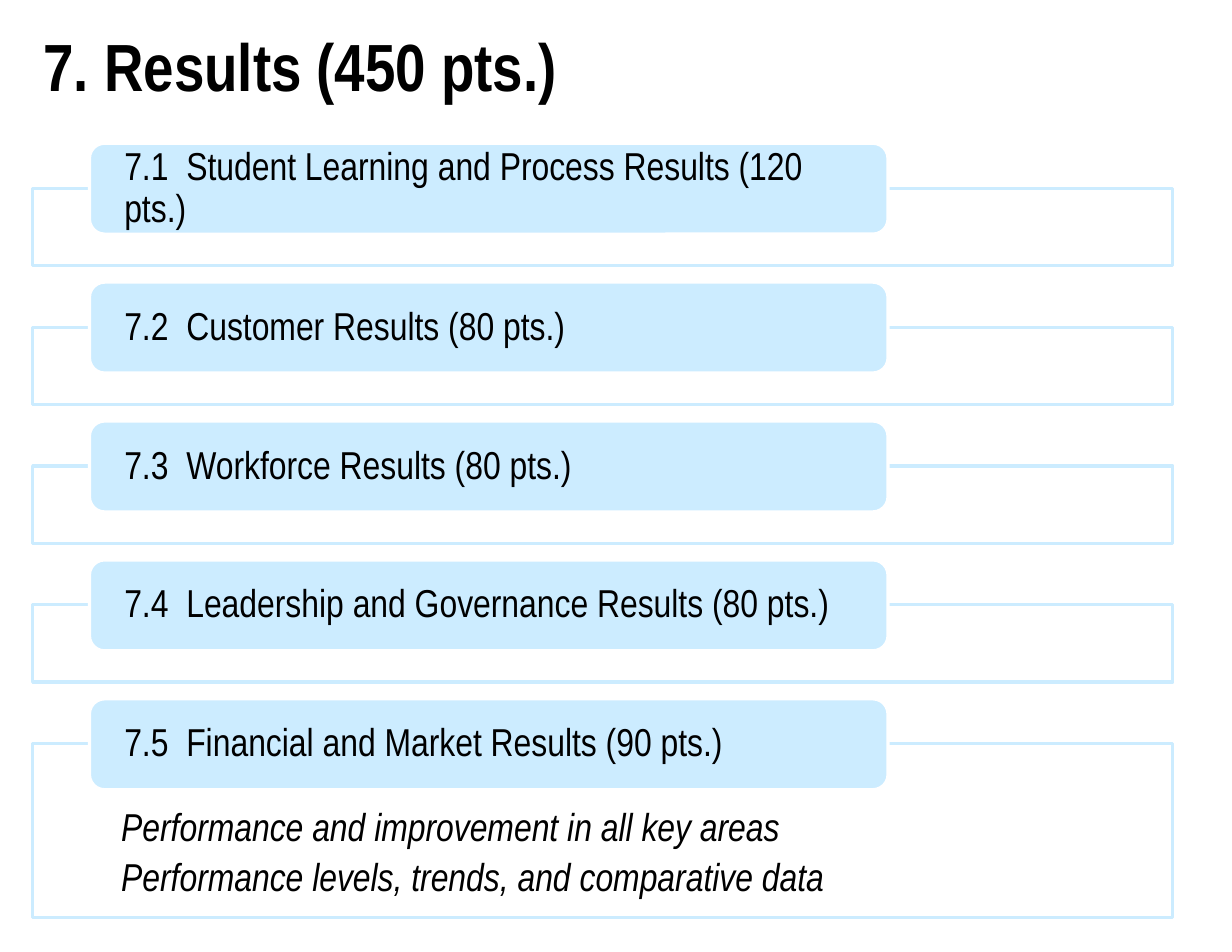
"""Build the "7. Results" slide: five titled result frames, the last with details."""
from dataclasses import dataclass

import pptx
import pptx.dml.color
import pptx.enum.shapes
import pptx.enum.text
import pptx.oxml
import pptx.oxml.ns
import pptx.util
from pptx.util import Cm

FONT = "Arial Narrow"
BLACK, WHITE, PALE = "000000", "FFFFFF", "CCECFF"
TOP, PITCH = 3.25, 3.15
LEFT, FRAME_W = 0.74, 25.86
LABEL_X, LABEL_W, LABEL_H = 2.03, 18.11, 2.06


@dataclass
class Item:
    label: str
    details: tuple[str, ...] = ()
    height: float = 1.75


ITEMS = [
    Item("7.1  Student Learning and Process Results (120 pts.)"),
    Item("7.2  Customer Results (80 pts.)"),
    Item("7.3  Workforce Results (80 pts.)"),
    Item("7.4  Leadership and Governance Results (80 pts.)"),
    Item("7.5  Financial and Market Results (90 pts.)",
         ("Performance and improvement in all key areas",
          "Performance levels, trends, and comparative data"), 3.94),
]


def rgb(value: str) -> pptx.dml.color.RGBColor:
    return pptx.dml.color.RGBColor.from_string(value)


def set_frame(tf, margins: tuple[float, ...], anchor) -> None:
    tf.word_wrap = True
    tf.vertical_anchor = anchor
    tf.margin_left, tf.margin_top, tf.margin_right, tf.margin_bottom = map(Cm, margins)


def add_run(p, text: str, size: float, bold: bool = False, italic: bool = False) -> None:
    p.alignment = pptx.enum.text.PP_ALIGN.LEFT
    r = p.add_run()
    r.text = text
    r.font.name, r.font.size = FONT, pptx.util.Pt(size)
    r.font.bold, r.font.italic = bold, italic
    r.font.color.rgb = rgb(BLACK)


def add_box(s, kind, box: tuple[float, ...], fill: str, line: str):
    sp = s.shapes.add_shape(kind, *map(Cm, box))
    sp.shadow.inherit = False
    sp.fill.solid()
    sp.fill.fore_color.rgb = rgb(fill)
    sp.line.color.rgb = rgb(line)
    sp.line.width = pptx.util.Pt(2)
    return sp


def set_alpha(sp, percent: int) -> None:
    color = sp.fill._xPr.find(".//" + pptx.oxml.ns.qn("a:srgbClr"))
    color.append(pptx.oxml.parse_xml(
        f'<a:alpha {pptx.oxml.ns.nsdecls("a")} val="{percent * 1000}"/>'))


def add_item(s, item: Item, y: float) -> None:
    shapes, anchors = pptx.enum.shapes.MSO_SHAPE, pptx.enum.text.MSO_ANCHOR
    frame = add_box(s, shapes.RECTANGLE, (LEFT, y + 1.02, FRAME_W, item.height), WHITE, PALE)
    set_alpha(frame, 90)
    tf = frame.text_frame
    set_frame(tf, (2.01, 1.45, 2.01, 0.48), anchors.TOP)
    for i, text in enumerate(item.details):
        p = tf.add_paragraph() if i else tf.paragraphs[0]
        p.line_spacing, p.space_after = 0.9, pptx.util.Pt(5)
        add_run(p, text, 25, italic=True)

    label = add_box(s, shapes.ROUNDED_RECTANGLE, (LABEL_X, y, LABEL_W, LABEL_H), PALE, WHITE)
    set_frame(label.text_frame, (0.69, 0, 0.69, 0), anchors.MIDDLE)
    p = label.text_frame.paragraphs[0]
    p.line_spacing = 0.9
    add_run(p, item.label, 25)


def main() -> None:
    prs = pptx.Presentation()
    prs.slide_width, prs.slide_height = Cm(27.94), Cm(21.59)
    s = prs.slides.add_slide(prs.slide_layouts[6])
    title = s.shapes.add_textbox(Cm(LEFT), Cm(0.43), Cm(20.32), Cm(2.08))
    set_frame(title.text_frame, (0.25, 0.13, 0.25, 0.13), pptx.enum.text.MSO_ANCHOR.TOP)
    add_run(title.text_frame.paragraphs[0], "7. Results (450 pts.)", 42.9, bold=True)
    for i, item in enumerate(ITEMS):
        add_item(s, item, TOP + i * PITCH)
    prs.save("out.pptx")


if __name__ == "__main__":
    main()
